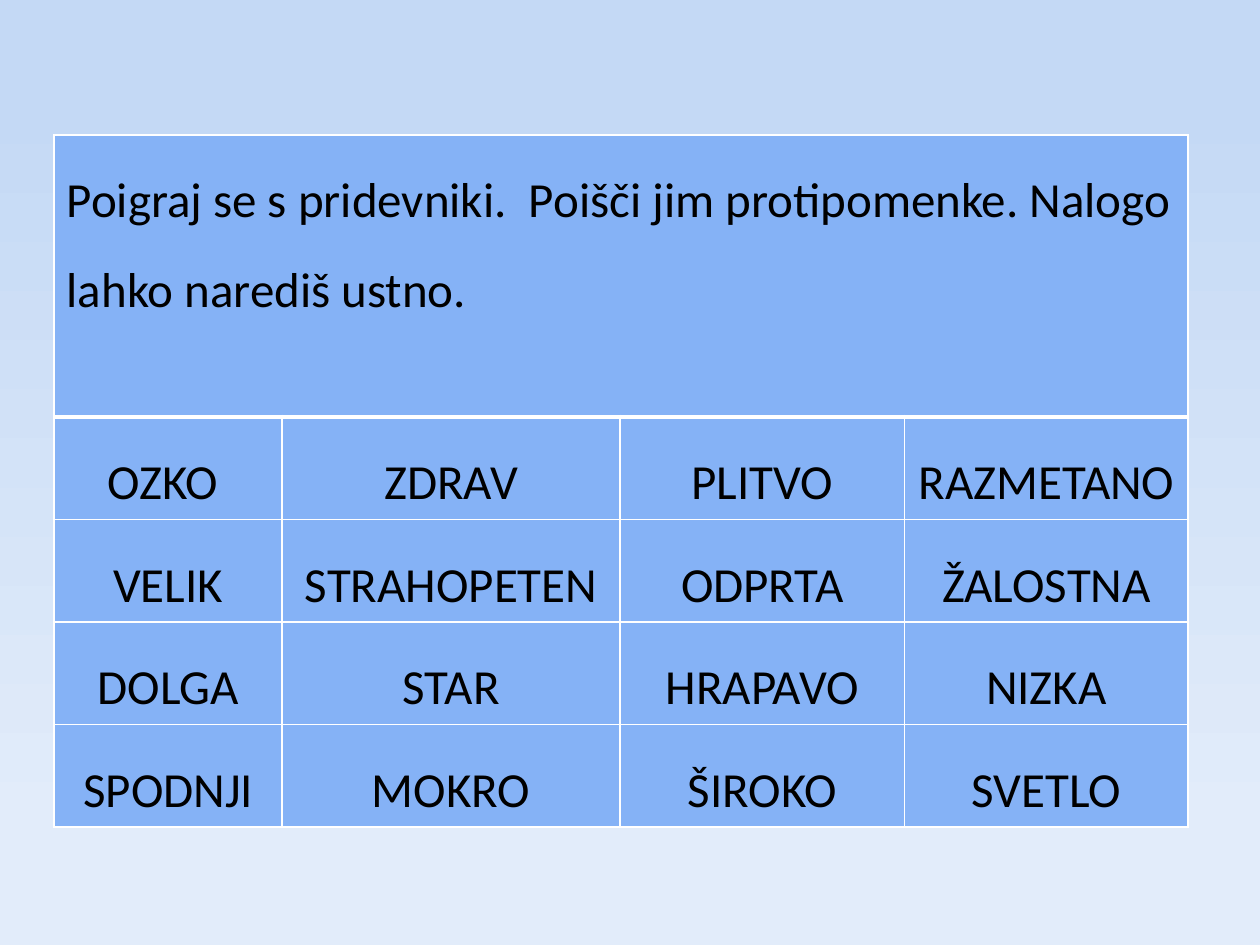
import pptx
import pptx.dml.color
import pptx.enum.text
import pptx.oxml
import pptx.oxml.ns
import pptx.util

Inches = pptx.util.Inches
RGBColor = pptx.dml.color.RGBColor
ALIGN = pptx.enum.text.PP_ALIGN

INSTRUCTION = "Poigraj se s pridevniki.  Poišči jim protipomenke. Nalogo lahko narediš ustno."
ADJECTIVES = [
    ("OZKO ", "ZDRAV", "PLITVO", "RAZMETANO"),
    ("VELIK", "STRAHOPETEN", "ODPRTA", "ŽALOSTNA"),
    ("DOLGA", "STAR", "HRAPAVO", "NIZKA"),
    ("SPODNJI", "MOKRO", "ŠIROKO", "SVETLO"),
]
COLUMN_WIDTHS = (1.81, 2.68, 2.26, 2.25)
HEADER_HEIGHT, ROW_HEIGHT = 2.24, 0.81

BLACK = RGBColor(0x00, 0x00, 0x00)
WHITE = RGBColor(0xFF, 0xFF, 0xFF)
CELL_BLUE = RGBColor(0x85, 0xB2, 0xF6)
BACKGROUND_STOPS = [
    (0.10, RGBColor(0xC4, 0xD9, 0xF5)),
    (0.88, RGBColor(0xE2, 0xEC, 0xFA)),
]


def write_text(cell, text, align=ALIGN.CENTER, size=28, color=BLACK, spacing=1.5):
    paragraph = cell.text_frame.paragraphs[0]
    paragraph.alignment = align
    paragraph.line_spacing = spacing
    run = paragraph.add_run()
    run.text = text
    run.font.name = "Calibri"
    run.font.size = pptx.util.Pt(size)
    run.font.bold = False
    run.font.color.rgb = color


def set_borders(cell, **widths):
    """Draw white borders; widths are points by side, in the order L, R, T, B."""
    properties = cell._tc.get_or_add_tcPr()
    for position, (side, width) in enumerate(widths.items()):
        border = pptx.oxml.parse_xml(
            f'<a:ln{side} {pptx.oxml.ns.nsdecls("a")} w="{pptx.util.Pt(width)}">'
            f'<a:solidFill><a:srgbClr val="{WHITE}"/></a:solidFill></a:ln{side}>'
        )
        properties.insert(position, border)


def add_background(slide):
    fill = slide.background.fill
    fill.gradient()
    fill.gradient_angle = 270
    for stop, (position, color) in zip(fill.gradient_stops, BACKGROUND_STOPS):
        stop.position = position
        stop.color.rgb = color


def add_adjective_table(slide):
    row_heights = [HEADER_HEIGHT] + [ROW_HEIGHT] * len(ADJECTIVES)
    table = slide.shapes.add_table(
        len(row_heights), len(COLUMN_WIDTHS), Inches(0.43), Inches(1.07),
        Inches(sum(COLUMN_WIDTHS)), Inches(sum(row_heights)),
    ).table
    table.horz_banding = False
    for column, width in zip(table.columns, COLUMN_WIDTHS):
        column.width = Inches(width)
    for row_index, height in enumerate(row_heights):
        table.rows[row_index].height = Inches(height)
        for cell in table.rows[row_index].cells:
            cell.fill.solid()
            cell.fill.fore_color.rgb = CELL_BLUE
            set_borders(cell, L=1, R=1, T=3 if row_index == 1 else 1,
                        B=3 if row_index == 0 else 1)

    header = table.cell(0, 0)
    header.merge(table.cell(0, len(COLUMN_WIDTHS) - 1))
    write_text(header, INSTRUCTION, align=ALIGN.LEFT)
    for row_index, words in enumerate(ADJECTIVES, start=1):
        for column_index, word in enumerate(words):
            write_text(table.cell(row_index, column_index), word)


def main():
    presentation = pptx.Presentation()
    presentation.slide_width = Inches(10)
    presentation.slide_height = Inches(7.5)
    slide = presentation.slides.add_slide(presentation.slide_layouts[6])
    add_background(slide)
    add_adjective_table(slide)
    presentation.save("out.pptx")


if __name__ == "__main__":
    main()
